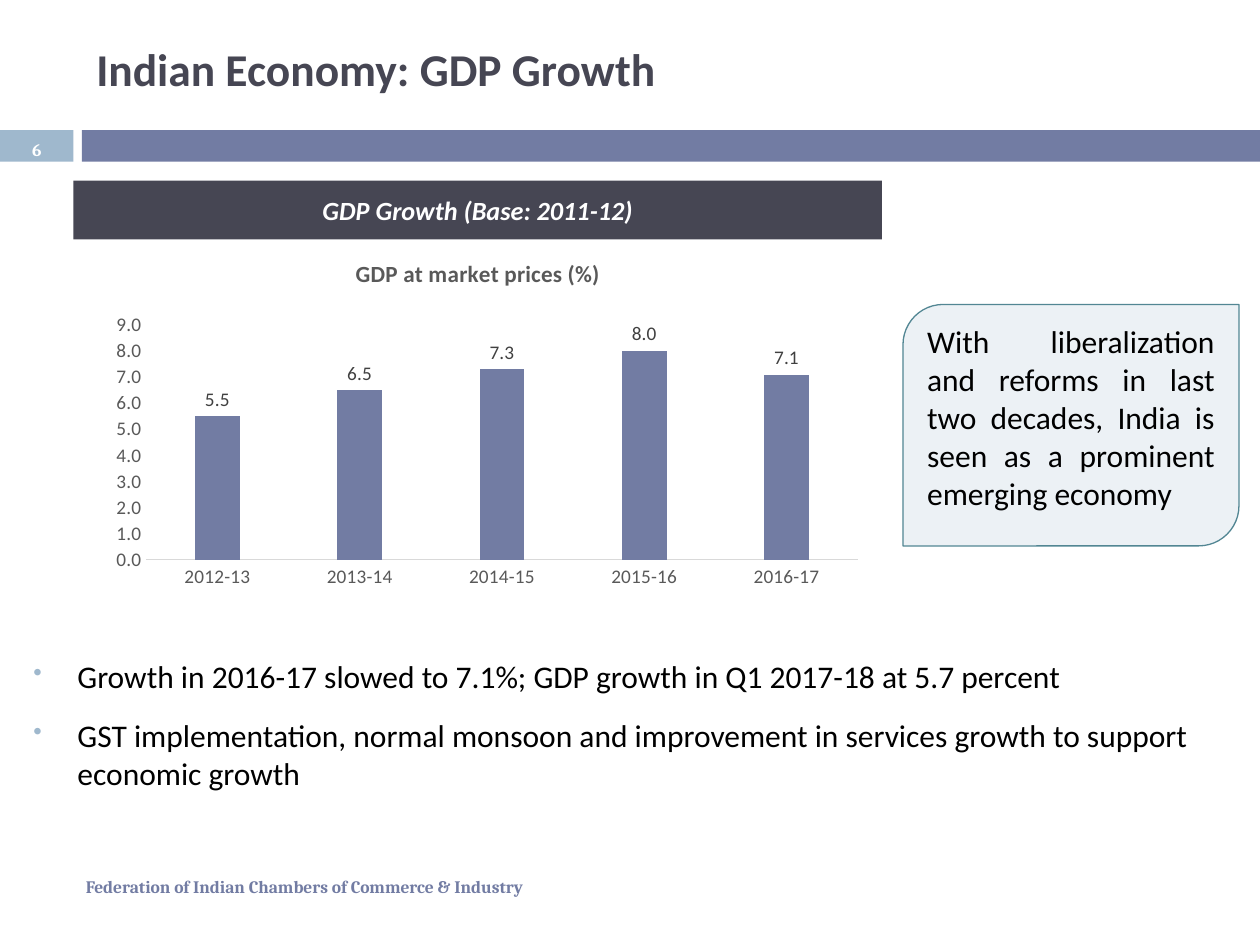
from lxml import etree
from pptx import Presentation
from pptx import util as u
from pptx.chart import data
from pptx.dml import color
from pptx.enum import chart as ch
from pptx.enum import shapes, text
from pptx.oxml import ns

HUES = {
    "band": "727CA3", "pale": "9FB8CD", "dark": "464653", "white": "FFFFFF",
    "black": "000000", "note": "ECF1F5", "edge": "528693",
    "grey": "595959", "label": "404040", "rule": "D9D9D9",
}
COLS, ROWS = 120, 90
LEFT, MID, FULL = text.PP_ALIGN.LEFT, text.PP_ALIGN.CENTER, text.PP_ALIGN.JUSTIFY


def apply(item, **vals):
    for name, val in vals.items():
        setattr(item, name, val)


def hue(name):
    return color.RGBColor.from_string(HUES[name])


class Deck:
    def __init__(self):
        self.prs = Presentation()
        apply(self.prs, slide_width=u.Inches(10), slide_height=u.Inches(7.5))
        self.slide = self.prs.slides.add_slide(self.prs.slide_layouts[6])

    def place(self, x, y, w, h):
        across, down = self.prs.slide_width / COLS, self.prs.slide_height / ROWS
        return [round(v) for v in (x * across, y * down, w * across, h * down)]

    def font(self, font, size, tint, face="Calibri", **vals):
        apply(font, size=u.Pt(size), name=face, **vals)
        font.color.rgb = hue(tint)

    def label(self, shape, lines, size, tint, align=LEFT, middle=True, bullet=None, **vals):
        frame = shape.text_frame
        anchor = text.MSO_ANCHOR.MIDDLE if middle else text.MSO_ANCHOR.TOP
        apply(frame, word_wrap=True, vertical_anchor=anchor)
        for i, line in enumerate(lines):
            para = frame.paragraphs[0] if i == 0 else frame.add_paragraph()
            if bullet:
                self.bullet(para, bullet)
            para.alignment = align
            if i:
                para.space_before = u.Pt(12)
            run = para.add_run()
            run.text = line
            self.font(run.font, size, tint, **vals)

    def bullet(self, para, tint):
        props = para._p.get_or_add_pPr()
        gap = u.Inches(0.35)
        props.set("marL", str(gap))
        props.set("indent", str(-gap))
        shade = etree.SubElement(props, ns.qn("a:buClr"))
        etree.SubElement(shade, ns.qn("a:srgbClr"), val=HUES[tint])
        etree.SubElement(props, ns.qn("a:buSzPct"), val="80000")
        etree.SubElement(props, ns.qn("a:buChar"), char="•")

    def text(self, spot, lines, size, tint, **vals):
        box = self.slide.shapes.add_textbox(*self.place(*spot))
        self.label(box, lines, size, tint, **vals)

    def shape(self, spot, fill, kind="RECTANGLE", edge=None):
        form = getattr(shapes.MSO_SHAPE, kind)
        shape = self.slide.shapes.add_shape(form, *self.place(*spot))
        shape.shadow.inherit = False
        shape.fill.solid()
        shape.fill.fore_color.rgb = hue(fill)
        if edge:
            shape.line.color.rgb = hue(edge)
            shape.line.width = u.Pt(0.75)
        else:
            shape.line.fill.background()
        return shape

    def chart(self, spot, name, cats, vals, area):
        feed = data.CategoryChartData(number_format="0.0")
        feed.categories = cats
        feed.add_series(name, vals)
        kind = ch.XL_CHART_TYPE.COLUMN_CLUSTERED
        chart = self.slide.shapes.add_chart(kind, *self.place(*spot), feed).chart
        apply(chart, has_legend=False, has_title=True)
        self.font(chart.font, 11, "black")
        title = chart.chart_title
        title.include_in_layout = False
        title.text_frame.text = name
        self.font(title.text_frame.paragraphs[0].runs[0].font, 13.2, "grey", bold=True)

        none = ch.XL_TICK_MARK.NONE
        for axis in (chart.category_axis, chart.value_axis):
            apply(axis, major_tick_mark=none, minor_tick_mark=none, has_major_gridlines=False)
            self.font(axis.tick_labels.font, 11, "grey")
        line = chart.category_axis.format.line
        line.color.rgb = hue("rule")
        line.width = u.Pt(0.75)
        apply(chart.value_axis, minimum_scale=0, maximum_scale=9, major_unit=1)
        chart.value_axis.format.line.fill.background()

        plot = chart.plots[0]
        apply(plot, gap_width=219, overlap=-27, vary_by_categories=False, has_data_labels=True)
        labels = plot.data_labels
        apply(labels, show_value=True, position=ch.XL_LABEL_POSITION.OUTSIDE_END)
        self.font(labels.font, 11, "label")
        for item in (labels, chart.value_axis.tick_labels):
            apply(item, number_format="0.0", number_format_is_linked=False)
        fill = plot.series[0].format.fill
        fill.solid()
        fill.fore_color.rgb = hue("band")
        self.layout(chart, area)

    def layout(self, chart, area):
        zone = chart._chartSpace.chart.plotArea
        for old in zone.findall(ns.qn("c:layout")):
            zone.remove(old)
        outer = etree.Element(ns.qn("c:layout"))
        zone.insert(0, outer)
        inner = etree.SubElement(outer, ns.qn("c:manualLayout"))
        parts = {"layoutTarget": "inner", "xMode": "edge", "yMode": "edge"}
        parts.update(zip("xywh", area))
        for name, val in parts.items():
            etree.SubElement(inner, ns.qn("c:" + name), val=str(val))


def main():
    deck = Deck()
    left, wide = 7, 77
    deck.shape((0, 12.4, left, 3), "pale")
    deck.shape((7.8, 12.4, COLS - 7.8, 3), "band")
    deck.text((left, 82, wide, 4.8), ["Federation of Indian Chambers of Commerce & Industry"],
              10, "band", face="Cambria", bold=True)
    deck.text((8, 1, 107, 11), ["Indian Economy: GDP Growth"], 26, "dark", bold=True)
    deck.text((0, 12.6, left, 3.2), ["6"], 10, "white", align=MID, face="Cambria", bold=True)
    deck.text((2, 62, 113, 17), [
        "Growth in 2016-17 slowed to 7.1%; GDP growth in Q1 2017-18 at 5.7 percent",
        "GST implementation, normal monsoon and improvement in services growth to support economic growth",
    ], 18, "black", middle=False, bullet="pale")
    head = deck.shape((left, 17.2, wide, 5.6), "dark")
    deck.label(head, ["GDP Growth (Base: 2011-12)"], 15, "white", align=MID, bold=True, italic=True)
    deck.chart((left, 22.8, wide, 35.5), "GDP at market prices (%)",
               ["2012-13", "2013-14", "2014-15", "2015-16", "2016-17"],
               [5.5, 6.5, 7.3, 8.0, 7.1], (0.09, 0.23, 0.88, 0.63))
    note = deck.shape((86, 29, 32, 23), "note", "ROUND_2_DIAG_RECTANGLE", "edge")
    deck.label(note, ["With liberalization and reforms in last two decades, India is seen as "
                      "a prominent emerging economy"], 18, "black", align=FULL, middle=False)
    deck.prs.save("out.pptx")


if __name__ == "__main__":
    main()
